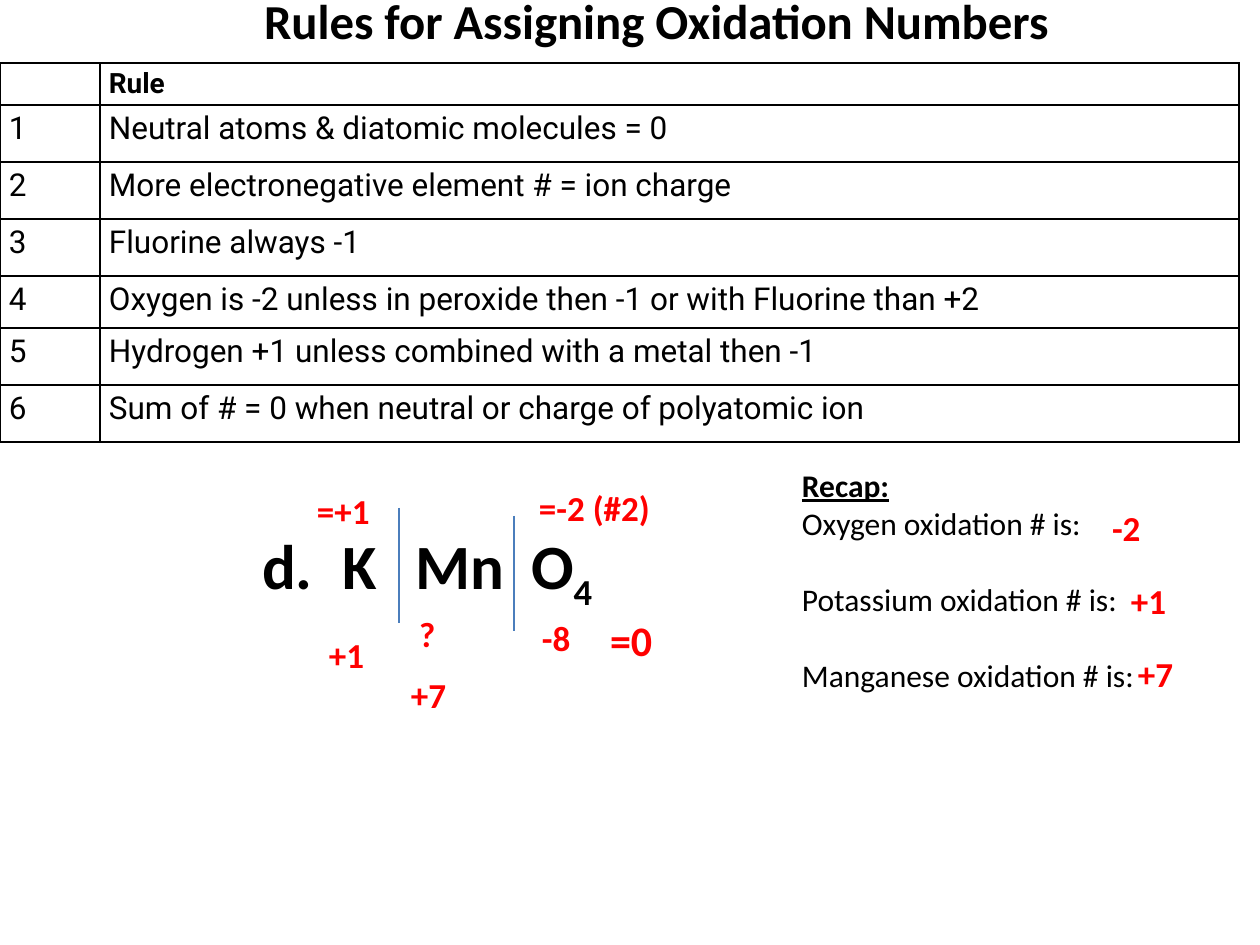
from dataclasses import dataclass

from lxml import etree
from pptx import Presentation
from pptx.dml.color import RGBColor
from pptx.enum.shapes import MSO_CONNECTOR
from pptx.enum.text import MSO_ANCHOR, MSO_AUTO_SIZE, PP_ALIGN
from pptx.oxml.ns import qn
from pptx.util import Emu, Pt

STRAIGHT = MSO_CONNECTOR.STRAIGHT
CENTER = PP_ALIGN.CENTER
TOP, MIDDLE = MSO_ANCHOR.TOP, MSO_ANCHOR.MIDDLE
NO_FIT, GROW = MSO_AUTO_SIZE.NONE, MSO_AUTO_SIZE.SHAPE_TO_FIT_TEXT
BLACK, RED, BLUE = "000000", "FF0000", "4B7EBC"
BODY, TABLE = "Calibri", "Roboto"
INSET_X, INSET_Y = 12, 6


@dataclass
class Label:
    text: str
    x: int
    y: int
    w: int
    h: int = 55
    size: int = 20


@dataclass
class Divider:
    x: int
    y: int
    length: int = 115


RULES = [
    "Neutral atoms & diatomic molecules = 0",
    "More electronegative element # = ion charge",
    "Fluorine always -1",
    "Oxygen is -2 unless in peroxide then -1 or with Fluorine than +2",
    "Hydrogen +1 unless combined with a metal then -1",
    "Sum of # = 0 when neutral or charge of polyatomic ion",
]
COLUMN_WIDTHS = [100, 1139]
ROW_HEIGHTS = [42, 57, 57, 57, 52, 57, 57]

DIVIDERS = [Divider(399, 508), Divider(514, 516)]

LABELS = [
    Label("=-2 (#2)", 527, 480, 137),
    Label("-8", 530, 610, 54),
    Label("=0", 598, 609, 68, 63, 24),
    Label("=+1", 305, 483, 87),
    Label("+1", 317, 627, 60),
    Label("?", 407, 606, 42),
    Label("+7", 399, 667, 60),
    Label("-2", 1100, 500, 54),
    Label("+1", 1119, 573, 60),
    Label("+7", 1126, 646, 60),
]

RECAP = ["Oxygen oxidation # is:", "Potassium oxidation # is:", "Manganese oxidation # is:"]
FORMULA_TABS = [80, 153, 269]


def px(n: int) -> Emu:
    return Emu(round(n * 914400 / 126))


def rgb(color: str) -> RGBColor:
    return RGBColor.from_string(color)


def set_font(p, size: float, color: str = BLACK, bold: bool = False, name: str = BODY) -> None:
    p.font.name = name
    p.font.size = Pt(size)
    p.font.bold = bold
    p.font.color.rgb = rgb(color)


def add_box(s, x: int, y: int, w: int, h: int, wrap: bool = False, anchor=TOP):
    tf = s.shapes.add_textbox(px(x), px(y), px(w), px(h)).text_frame
    tf.word_wrap = wrap
    tf.auto_size = NO_FIT if wrap else GROW
    tf.vertical_anchor = anchor
    tf.margin_left = tf.margin_right = px(INSET_X)
    tf.margin_top = tf.margin_bottom = px(INSET_Y)
    return tf


def add_title(s) -> None:
    p = add_box(s, 95, -10, 1123, 60, True, MIDDLE).paragraphs[0]
    p.text = "Rules for Assigning Oxidation Numbers"
    p.alignment = CENTER
    set_font(p, 27.9, bold=True)


def add_borders(cell) -> None:
    tc_pr = cell._tc.get_or_add_tcPr()
    for i, side in enumerate(("a:lnL", "a:lnR", "a:lnT", "a:lnB")):
        ln = etree.Element(qn(side), w=str(Pt(1)))
        fill = etree.SubElement(ln, qn("a:solidFill"))
        etree.SubElement(fill, qn("a:srgbClr"), val=BLACK)
        tc_pr.insert(i, ln)


def fill_cell(cell, text: str, size: int, bold: bool) -> None:
    cell.margin_left = cell.margin_right = px(9)
    cell.margin_top = cell.margin_bottom = 0
    cell.fill.background()
    add_borders(cell)
    p = cell.text_frame.paragraphs[0]
    p.text = text
    p.line_spacing = 1.15
    set_font(p, size, bold=bold, name=TABLE)


def add_rules(s) -> None:
    rows = [("", "Rule")] + [(str(i), rule) for i, rule in enumerate(RULES, 1)]
    frame = s.shapes.add_table(len(rows), len(COLUMN_WIDTHS), 0, px(63),
                               px(sum(COLUMN_WIDTHS)), px(sum(ROW_HEIGHTS)))
    table = frame.table
    table.first_row = table.horz_banding = False
    for column, width in zip(table.columns, COLUMN_WIDTHS):
        column.width = px(width)
    for i, (texts, height) in enumerate(zip(rows, ROW_HEIGHTS)):
        table.rows[i].height = px(height)
        for j, text in enumerate(texts):
            fill_cell(table.cell(i, j), text, 18 if i else 16, i == 0)


def add_formula(s) -> None:
    p = add_box(s, 250, 521, 370, 90, True).paragraphs[0]
    set_font(p, 36, bold=True)
    p.add_run().text = "d.\tK\tMn\tO"
    r = p.add_run()
    r.text = "4"
    r._r.get_or_add_rPr().set("baseline", "-25000")
    tabs = etree.Element(qn("a:tabLst"))
    for x in FORMULA_TABS:
        etree.SubElement(tabs, qn("a:tab"), pos=str(px(x)), algn="l")
    p._p.get_or_add_pPr().insert(0, tabs)


def add_divider(s, divider: Divider) -> None:
    line = s.shapes.add_connector(STRAIGHT, px(divider.x), px(divider.y),
                                  px(divider.x), px(divider.y + divider.length))
    line.line.color.rgb = rgb(BLUE)
    line.line.width = Pt(0.75)
    etree.SubElement(line._element.spPr, qn("a:effectLst"))


def add_label(s, label: Label) -> None:
    p = add_box(s, label.x, label.y, label.w, label.h).paragraphs[0]
    p.text = label.text
    set_font(p, label.size, RED, True)


def add_recap(s) -> None:
    tf = add_box(s, 790, 460, 369, 242)
    p = tf.paragraphs[0]
    p.text = "Recap:"
    set_font(p, 18, bold=True)
    p.font.underline = True
    for i, text in enumerate(RECAP):
        p = tf.add_paragraph()
        p.text = text
        p.space_before = Pt(22 if i else 0)
        set_font(p, 18)


def main() -> None:
    prs = Presentation()
    prs.slide_width, prs.slide_height = px(1260), px(945)
    s = prs.slides.add_slide(prs.slide_layouts[6])
    add_title(s)
    add_rules(s)
    add_formula(s)
    for divider in DIVIDERS:
        add_divider(s, divider)
    for label in LABELS:
        add_label(s, label)
    add_recap(s)
    prs.save("out.pptx")


if __name__ == "__main__":
    main()
